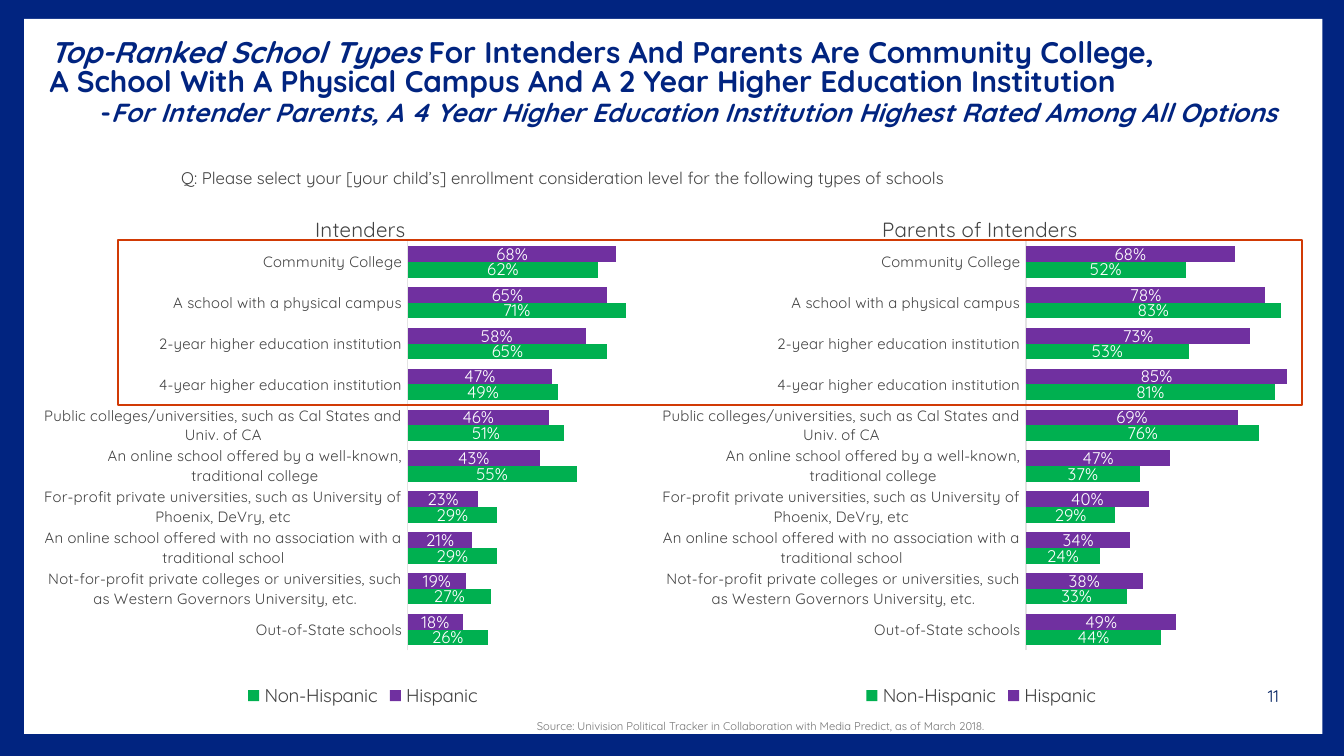
from dataclasses import dataclass

import lxml.etree
import pptx
import pptx.chart.data
import pptx.dml.color
import pptx.enum.chart
import pptx.enum.shapes
import pptx.enum.text
import pptx.oxml.ns
import pptx.util

SLIDE_WIDTH = pptx.util.Inches(10)
SLIDE_HEIGHT = SLIDE_WIDTH * 9 // 16
COLUMN = SLIDE_WIDTH / 100
ROW = SLIDE_HEIGHT / 100

FONT = "Quicksand"
NAVY = "012480"
WHITE = "FFFFFF"
GRAY = "424242"
CENTER = pptx.enum.text.PP_ALIGN.CENTER
RIGHT = pptx.enum.text.PP_ALIGN.RIGHT
LEFT = pptx.enum.text.PP_ALIGN.LEFT
MIDDLE = pptx.enum.text.MSO_ANCHOR.MIDDLE
TOP = pptx.enum.text.MSO_ANCHOR.TOP
RECTANGLE = pptx.enum.shapes.MSO_SHAPE.RECTANGLE

CATEGORIES = [
    "Community College",
    "A school with a physical campus",
    "2-year higher education institution",
    "4-year higher education institution",
    "Public colleges/universities, such as Cal States and Univ. of CA",
    "An online school offered by a well-known, traditional college",
    "For-profit private universities, such as University of Phoenix, DeVry, etc",
    "An online school offered with no association with a traditional school",
    "Not-for-profit private colleges or universities, such as Western Governors University, etc.",
    "Out-of-State schools",
]
SERIES_COLORS = {"Hispanic": "7030A0", "Non-Hispanic": "00B050"}


@dataclass(frozen=True)
class Box:
    column: float
    row: float
    columns: float
    rows: float

    def lengths(self) -> tuple[int, int, int, int]:
        return (round(self.column * COLUMN), round(self.row * ROW),
                round(self.columns * COLUMN), round(self.rows * ROW))


@dataclass(frozen=True)
class Run:
    text: str
    size: float
    color: str
    bold: bool = False
    italic: bool = False


@dataclass(frozen=True)
class Label:
    box: Box
    run: Run
    alignment: pptx.enum.text.PP_ALIGN = LEFT
    anchor: pptx.enum.text.MSO_ANCHOR = TOP


@dataclass(frozen=True)
class Panel:
    title: str
    title_left: float
    column: float
    percentages: dict[str, list[int]]


@dataclass(frozen=True)
class HeadingLine:
    indent: float
    space_before: float
    runs: list[Run]


HEADING = [
    HeadingLine(0.37, 0, [
        Run("Top-Ranked School Types ", 16, NAVY, True, True),
        Run("For Intenders And Parents Are Community College,", 16, NAVY, True),
    ]),
    HeadingLine(0.37, 0, [
        Run("A School With A Physical Campus And A 2 Year Higher Education Institution",
            16, NAVY, True),
    ]),
    HeadingLine(0.75, 2, [
        Run("-", 14, NAVY, True),
        Run("For Intender Parents, A 4 Year Higher Education Institution "
            "Highest Rated Among All Options", 14, NAVY, True, True),
    ]),
]
LABELS = [
    Label(Box(3.1, 94.22, 71.1, 3.56),
          Run("Source: Univision Political Tracker in Collaboration with Media Predict, "
              "as of March 2018.", 6, "747474"), RIGHT),
    Label(Box(12.5, 21.33, 75, 4.44),
          Run("Q: Please select your [your child’s] enrollment consideration level "
              "for the following types of schools", 9, GRAY)),
    Label(Box(92.9, 89.42, 3.7, 5.33), Run("11", 9, "002060"), CENTER, MIDDLE),
]
PANELS = [
    Panel("Intenders", 0.42, 3.1, {
        "Hispanic": [68, 65, 58, 47, 46, 43, 23, 21, 19, 18],
        "Non-Hispanic": [62, 71, 65, 49, 51, 55, 29, 29, 27, 26],
    }),
    Panel("Parents of Intenders", 0.34, 49.1, {
        "Hispanic": [68, 78, 73, 85, 69, 47, 40, 34, 38, 49],
        "Non-Hispanic": [52, 83, 53, 81, 76, 37, 29, 24, 33, 44],
    }),
]


def rgb(color: str) -> pptx.dml.color.RGBColor:
    return pptx.dml.color.RGBColor.from_string(color)


def style_font(font, size: float, color: str, name: str = FONT) -> None:
    font.name = name
    font.size = pptx.util.Pt(size)
    font.color.rgb = rgb(color)


def add_run(paragraph, content: Run) -> None:
    run = paragraph.add_run()
    run.text = content.text
    style_font(run.font, content.size, content.color)
    run.font.bold = content.bold
    run.font.italic = content.italic


def add_panel_shape(slide, box: Box, kind=RECTANGLE, fill: str = "", line: str = ""):
    shape = slide.shapes.add_shape(kind, *box.lengths())
    shape.shadow.inherit = False
    if fill:
        shape.fill.solid()
        shape.fill.fore_color.rgb = rgb(fill)
    else:
        shape.fill.background()
    if line:
        shape.line.color.rgb = rgb(line)
        shape.line.width = pptx.util.Pt(1)
    else:
        shape.line.fill.background()
    return shape


def add_heading(slide, box: Box, lines: list[HeadingLine]) -> None:
    shape = add_panel_shape(slide, box, pptx.enum.shapes.MSO_SHAPE.PENTAGON)
    frame = shape.text_frame
    frame.word_wrap = True
    frame.margin_right = 0
    frame.vertical_anchor = MIDDLE
    for index, line in enumerate(lines):
        paragraph = frame.add_paragraph() if index else frame.paragraphs[0]
        paragraph.alignment = LEFT
        paragraph.line_spacing = 0.8
        paragraph.space_before = pptx.util.Pt(line.space_before)
        paragraph._p.get_or_add_pPr().set("marL", str(pptx.util.Inches(line.indent)))
        for run in line.runs:
            add_run(paragraph, run)


def add_label(slide, label: Label) -> None:
    frame = slide.shapes.add_textbox(*label.box.lengths()).text_frame
    frame.word_wrap = True
    frame.vertical_anchor = label.anchor
    frame.paragraphs[0].alignment = label.alignment
    add_run(frame.paragraphs[0], label.run)


def set_layout(parent, index: int, **values: str | float) -> None:
    tag = pptx.oxml.ns.qn
    for existing in parent.findall(tag("c:layout")):
        parent.remove(existing)
    layout = lxml.etree.Element(tag("c:layout"))
    manual = lxml.etree.SubElement(layout, tag("c:manualLayout"))
    for name, value in values.items():
        lxml.etree.SubElement(manual, tag(f"c:{name}")).set("val", str(value))
    parent.insert(index, layout)


def add_panel_chart(slide, panel: Panel) -> None:
    data = pptx.chart.data.CategoryChartData(number_format="0%")
    data.categories = CATEGORIES
    for name, percentages in panel.percentages.items():
        data.add_series(name, [value / 100 for value in percentages])
    chart = slide.shapes.add_chart(
        pptx.enum.chart.XL_CHART_TYPE.BAR_CLUSTERED,
        *Box(panel.column, 25.78, 47.8, 68.44).lengths(), data).chart
    style_font(chart.font, 10, GRAY, "Calibri")

    chart.has_title = True
    run = chart.chart_title.text_frame.paragraphs[0].add_run()
    run.text = panel.title
    style_font(run.font, 11, GRAY)
    run.font.bold = False
    run.font.underline = True
    set_layout(chart.chart_title.element, 1, xMode="edge", yMode="edge",
               x=panel.title_left, y=0.03)
    plot_area = chart.element.find(".//" + pptx.oxml.ns.qn("c:plotArea"))
    set_layout(plot_area, 0, layoutTarget="inner", xMode="edge", yMode="edge",
               x=0.57, y=0.09, w=0.43, h=0.79)

    chart.has_legend = True
    chart.legend.position = pptx.enum.chart.XL_LEGEND_POSITION.BOTTOM
    chart.legend.include_in_layout = False
    style_font(chart.legend.font, 10, GRAY)

    axis = chart.category_axis
    axis.reverse_order = True
    axis.major_tick_mark = pptx.enum.chart.XL_TICK_MARK.NONE
    axis.format.line.color.rgb = rgb("E3E3E3")
    axis.format.line.width = pptx.util.Pt(0.75)
    style_font(axis.tick_labels.font, 8, GRAY)
    chart.value_axis.visible = False
    chart.value_axis.has_major_gridlines = False
    chart.value_axis.minimum_scale = 0
    chart.value_axis.maximum_scale = 0.9

    plot = chart.plots[0]
    plot.gap_width = 60
    plot.overlap = 0
    plot.vary_by_categories = False
    for series in plot.series:
        series.format.fill.solid()
        series.format.fill.fore_color.rgb = rgb(SERIES_COLORS[series.name])
        labels = series.data_labels
        labels.show_value = True
        labels.number_format = "0%"
        labels.number_format_is_linked = False
        labels.position = pptx.enum.chart.XL_LABEL_POSITION.CENTER
        style_font(labels.font, 9, WHITE)


def main() -> None:
    presentation = pptx.Presentation()
    presentation.slide_width = SLIDE_WIDTH
    presentation.slide_height = SLIDE_HEIGHT
    slide = presentation.slides.add_slide(presentation.slide_layouts[6])
    add_panel_shape(slide, Box(0, 0, 100, 100), fill=NAVY)
    add_panel_shape(slide, Box(1.8, 2.49, 96.6, 94.58), fill=WHITE)
    add_heading(slide, Box(-1, 3.56, 99.2, 15.11), HEADING)
    for panel in PANELS:
        add_panel_chart(slide, panel)
    for label in LABELS:
        add_label(slide, label)
    add_panel_shape(slide, Box(8.8, 31.7, 88.1, 21.87), line="D13A05")
    presentation.save("out.pptx")


if __name__ == "__main__":
    main()
